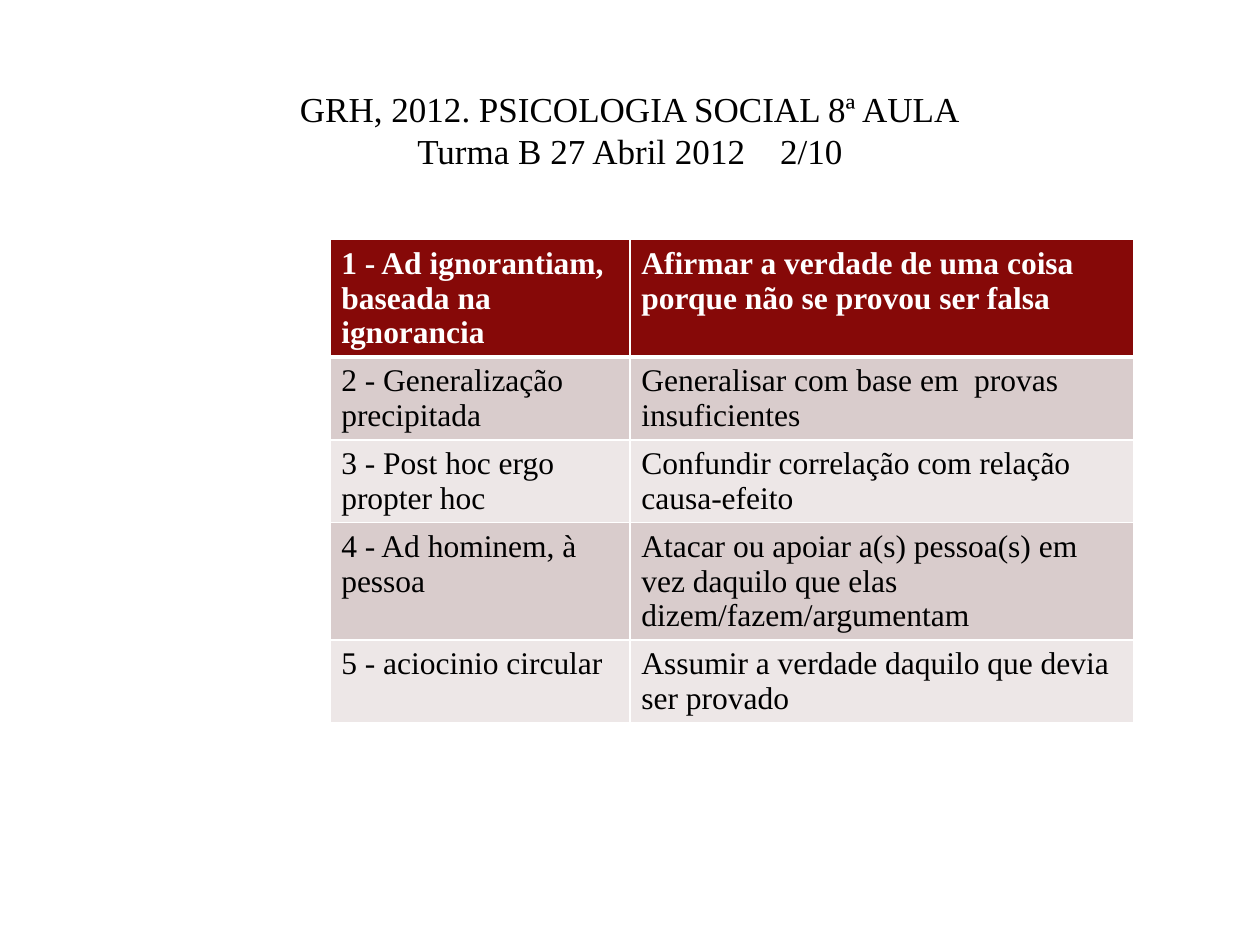
import pptx
import pptx.dml.color
import pptx.enum.text
import pptx.util
from lxml import etree
from pptx.oxml.ns import qn

Cm, Pt = pptx.util.Cm, pptx.util.Pt
RGB = pptx.dml.color.RGBColor.from_string
FONT = "Times New Roman"
COLORS = {"header": "860908", "dark band": "D9CCCC", "light band": "EDE7E7",
          "text": "000000", "white": "FFFFFF"}


def add_run(p, text, size, color, bold=False):
    r = p.add_run()
    r.text = text
    r.font.name, r.font.size, r.font.bold = FONT, Pt(size), bold
    r.font.color.rgb = RGB(COLORS[color])


def add_border(cell, side, width):
    """Draw a white line on one side (L, R, T or B), before any fill is set."""
    tcPr = cell._tc.get_or_add_tcPr()
    ln = etree.SubElement(tcPr, qn(f"a:ln{side}"), w=str(Pt(width)))
    fill = etree.SubElement(ln, qn("a:solidFill"))
    etree.SubElement(fill, qn("a:srgbClr"), val=COLORS["white"])


prs = pptx.Presentation()
prs.slide_width, prs.slide_height = Cm(25.4), Cm(19.05)
s = prs.slides.add_slide(prs.slide_layouts[5])

# Title
title = s.shapes.title
title.left, title.top, title.width, title.height = Cm(2.54), Cm(1.4), Cm(20.32), Cm(2.41)
tf = title.text_frame
tf.word_wrap = True
tf.vertical_anchor = pptx.enum.text.MSO_ANCHOR.MIDDLE
p = tf.paragraphs[0]
p.alignment = pptx.enum.text.PP_ALIGN.CENTER
add_run(p, "GRH, 2012. PSICOLOGIA SOCIAL 8ª AULA", 20, "text")
p.add_line_break()
add_run(p, "Turma B 27 Abril 2012    2/10", 20, "text")

# Table of fallacies
rows = [
    ("1 - Ad ignorantiam, baseada na ignorancia",
     "Afirmar a verdade de uma coisa porque não se provou ser falsa"),
    ("2 - Generalização precipitada",
     "Generalisar com base em  provas insuficientes"),
    ("3 - Post hoc ergo propter hoc",
     "Confundir correlação com relação causa-efeito"),
    ("4 - Ad hominem, à pessoa",
     "Atacar ou apoiar a(s) pessoa(s) em vez daquilo que elas dizem/fazem/argumentam"),
    ("5 - aciocinio circular",
     "Assumir a verdade daquilo que devia ser provado"),
]
col_widths = [6.05, 16.2 - 6.05]
row_heights = [2.36, 1.65, 1.65, 2.36, 1.65]
table = s.shapes.add_table(len(rows), len(col_widths), Cm(6.65), Cm(4.83),
                           Cm(sum(col_widths)), Cm(sum(row_heights))).table
for column, width in zip(table.columns, col_widths):
    column.width = Cm(width)

for i, texts in enumerate(rows):
    table.rows[i].height = Cm(row_heights[i])
    header = i == 0
    band = "header" if header else "dark band" if i % 2 else "light band"
    for j, text in enumerate(texts):
        cell = table.cell(i, j)
        cell.margin_left = cell.margin_right = Cm(0.23)
        cell.margin_top = cell.margin_bottom = Cm(0.13)
        for side in "LRTB":
            thick = (header and side == "B") or (i == 1 and side == "T")
            add_border(cell, side, 3 if thick else 1)
        cell.fill.solid()
        cell.fill.fore_color.rgb = RGB(COLORS[band])
        add_run(cell.text_frame.paragraphs[0], text, 18,
                "white" if header else "text", bold=header)

prs.save("out.pptx")
